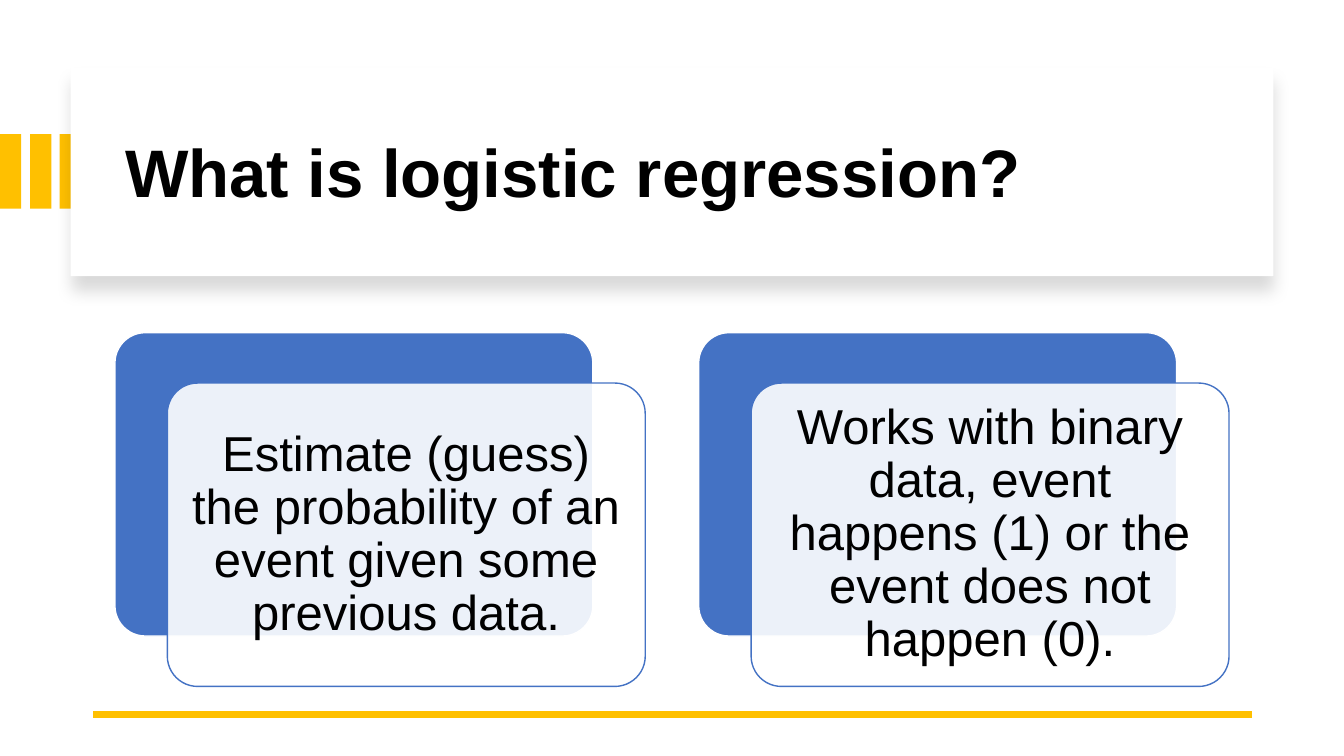
from lxml import etree
from pptx import Presentation
from pptx.dml.color import RGBColor
from pptx.enum.shapes import MSO_CONNECTOR, MSO_SHAPE
from pptx.enum.text import MSO_ANCHOR, PP_ALIGN
from pptx.oxml import parse_xml
from pptx.oxml.ns import nsdecls, qn
from pptx.util import Pt

RECT, ROUNDED = MSO_SHAPE.RECTANGLE, MSO_SHAPE.ROUNDED_RECTANGLE
STRAIGHT = MSO_CONNECTOR.STRAIGHT
MIDDLE = MSO_ANCHOR.MIDDLE
LEFT, CENTER = PP_ALIGN.LEFT, PP_ALIGN.CENTER

PX = 9144
FONT = "Arial"
WHITE = RGBColor(0xFF, 0xFF, 0xFF)
BLACK = RGBColor(0x00, 0x00, 0x00)
GOLD = RGBColor(0xFF, 0xC0, 0x00)
BLUE = RGBColor(0x44, 0x72, 0xC4)

CARDS = [
    "Estimate (guess) the probability of an event given some previous data.",
    "Works with binary data, event happens (1) or the event does not happen (0).",
]


def px(*lengths):
    """Turn px lengths into EMU."""
    return [n * PX for n in lengths]


def add_box(s, kind, box, fill, line=None):
    """Add a filled shape with an optional 1 pt outline."""
    sp = s.shapes.add_shape(kind, *px(*box))
    sp.shadow.inherit = False
    sp.fill.solid()
    sp.fill.fore_color.rgb = fill
    if line is None:
        sp.line.fill.background()
    else:
        sp.line.color.rgb = line
        sp.line.width = Pt(1)
    return sp


def write(sp, text, size, align, bold=False):
    """Set the text of a shape as one formatted paragraph."""
    tf = sp.text_frame
    tf.text = text
    tf.word_wrap = True
    tf.vertical_anchor = MIDDLE
    p = tf.paragraphs[0]
    p.alignment = align
    p.line_spacing = 0.9
    font = p.runs[0].font
    font.name, font.size, font.bold = FONT, Pt(size), bold
    font.color.rgb = BLACK


def add_title_panel(s, text):
    """Add the shadowed white panel and put the title on it."""
    panel = add_box(s, RECT, (70, 67, 1193, 207), WHITE)
    effects = panel.element.spPr.find(qn("a:effectLst"))
    effects.append(parse_xml(
        f'<a:outerShdw {nsdecls("a")} blurRad="{Pt(11)}" dist="{Pt(10)}" '
        'dir="5400000" algn="t" rotWithShape="0"><a:srgbClr val="000000">'
        '<a:alpha val="15000"/></a:srgbClr></a:outerShdw>'))
    title = s.shapes.title
    title.left, title.top, title.width, title.height = px(114, 89, 1113, 170)
    write(title, text, 48, LEFT, bold=True)
    panel.element.addnext(title.element)


def add_rule(s, x1, x2, y):
    """Add the gold rule at the foot of the slide."""
    rule = s.shapes.add_connector(STRAIGHT, *px(x1, y, x2, y))
    rule.line.color.rgb = GOLD
    rule.line.width = Pt(4.5)
    etree.SubElement(rule.element.spPr, qn("a:effectLst"))


def add_card(s, x, y, text):
    """Add a blue card with a translucent text card over it."""
    w, h = 474, 301
    back = add_box(s, ROUNDED, (x, y, w, h), BLUE, WHITE)
    front = add_box(s, ROUNDED, (x + 52, y + 50, w, h), WHITE, BLUE)
    for sp in (back, front):
        sp.adjustments[0] = 0.1
    color = front.element.spPr.find(qn("a:solidFill"))[0]
    etree.SubElement(color, qn("a:alpha"), val="90000")
    tf = front.text_frame
    tf.margin_left, tf.margin_top, tf.margin_right, tf.margin_bottom = px(15, 15, 15, 15)
    write(front, text, 35, CENTER)


def main():
    """Build the slide and save it."""
    prs = Presentation()
    prs.slide_width, prs.slide_height = px(1333, 750)
    s = prs.slides.add_slide(prs.slide_layouts[5])
    for i in range(3):
        add_box(s, RECT, (round(i * 29.5), 133, 21, 74), GOLD)
    add_title_panel(s, "What is logistic regression?")
    add_rule(s, 1242, 92, 709)
    for i, text in enumerate(CARDS):
        add_card(s, 114 + i * 579, 330, text)
    prs.save("out.pptx")


if __name__ == "__main__":
    main()
